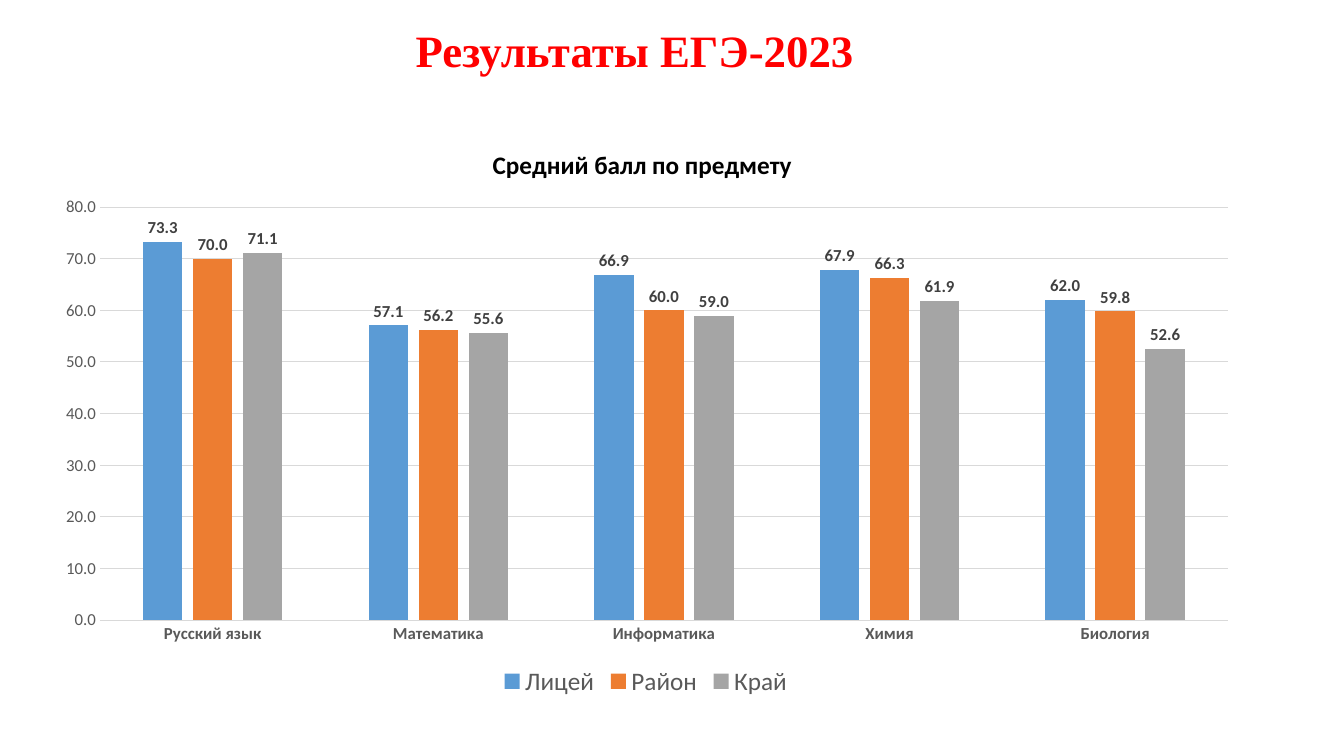
from dataclasses import dataclass

import lxml.etree
import pptx
import pptx.chart.data
import pptx.dml.color
import pptx.enum.chart
import pptx.enum.text
import pptx.oxml
import pptx.oxml.ns
import pptx.util
from pptx.util import Inches


@dataclass(frozen=True)
class Theme:
    heading_font: str = "Times New Roman"
    body_font: str = "Calibri"
    heading: str = "FF0000"
    black: str = "000000"
    label: str = "404040"
    muted: str = "595959"
    grid: str = "D9D9D9"
    heading_size: int = 32
    large_size: int = 18
    label_size: int = 12
    base_size: int = 10
    line_width: float = 0.75


@dataclass(frozen=True)
class ScoreSeries:
    name: str
    color: str
    scores: tuple[float, ...]


@dataclass(frozen=True)
class Layout:
    """Place inside the chart, as fractions of its size."""
    x: float
    y: float
    w: float | None = None
    h: float | None = None


THEME = Theme()
SUBJECTS = ("Русский язык", "Математика", "Информатика", "Химия", "Биология")
SERIES = (
    ScoreSeries("Лицей", "5B9BD5", (73.3, 57.1, 66.9, 67.9, 62)),
    ScoreSeries("Район", "ED7D31", (70, 56.2, 60, 66.3, 59.8)),
    ScoreSeries("Край", "A5A5A5", (71.1, 55.6, 59, 61.9, 52.6)),
)
TITLE_LAYOUT = Layout(0.37, 0.04)
PLOT_LAYOUT = Layout(0.05, 0.15, 0.93, 0.71)
NUMBER_FORMAT = "0.0"


def rgb(color: str) -> pptx.dml.color.RGBColor:
    return pptx.dml.color.RGBColor.from_string(color)


def style_font(font, size: int, color: str, bold: bool = False,
               name: str = THEME.body_font) -> None:
    font.name = name
    font.size = pptx.util.Pt(size)
    font.bold = bold
    font.color.rgb = rgb(color)


def style_line(line) -> None:
    line.color.rgb = rgb(THEME.grid)
    line.width = pptx.util.Pt(THEME.line_width)


def set_layout(element, layout: Layout, index: int) -> None:
    """Give a chart part a manual layout, as its child number index."""
    qn = pptx.oxml.ns.qn
    for old in element.findall(qn("c:layout")):
        element.remove(old)
    node = pptx.oxml.parse_xml(f"<c:layout {pptx.oxml.ns.nsdecls('c')}/>")
    manual = lxml.etree.SubElement(node, qn("c:manualLayout"))
    settings = {"xMode": "edge", "yMode": "edge", "x": layout.x, "y": layout.y}
    if layout.w is not None:
        settings = {"layoutTarget": "inner"} | settings | {"w": layout.w, "h": layout.h}
    for tag, value in settings.items():
        lxml.etree.SubElement(manual, qn(f"c:{tag}")).set("val", str(value))
    element.insert(index, node)


def add_heading(s) -> None:
    sp = s.shapes.title
    sp.left, sp.top, sp.width, sp.height = map(Inches, (0.85, 0.15, 10.89, 0.76))
    tf = sp.text_frame
    tf.vertical_anchor = pptx.enum.text.MSO_ANCHOR.MIDDLE
    p = tf.paragraphs[0]
    p.alignment = pptx.enum.text.PP_ALIGN.CENTER
    p.line_spacing = 0.9
    r = p.add_run()
    r.text = "Результаты ЕГЭ-2023"
    style_font(r.font, THEME.heading_size, THEME.heading, True, THEME.heading_font)


def style_axes(chart) -> None:
    category, value = chart.category_axis, chart.value_axis
    for axis in (category, value):
        axis.major_tick_mark = pptx.enum.chart.XL_TICK_MARK.NONE
        axis.minor_tick_mark = pptx.enum.chart.XL_TICK_MARK.NONE
        style_font(axis.tick_labels.font, THEME.label_size, THEME.muted, axis is category)
    style_line(category.format.line)
    value.format.line.fill.background()
    value.minimum_scale, value.maximum_scale, value.major_unit = 0, 80, 10
    value.tick_labels.number_format = NUMBER_FORMAT
    value.tick_labels.number_format_is_linked = False
    value.has_major_gridlines = True
    style_line(value.major_gridlines.format.line)


def style_series(plot) -> None:
    for series, score in zip(plot.series, SERIES):
        series.format.fill.solid()
        series.format.fill.fore_color.rgb = rgb(score.color)
        series.invert_if_negative = False
        labels = series.data_labels
        labels.show_value = True
        labels.number_format = NUMBER_FORMAT
        labels.number_format_is_linked = False
        labels.position = pptx.enum.chart.XL_LABEL_POSITION.OUTSIDE_END
        style_font(labels.font, THEME.label_size, THEME.label, True)


def add_score_chart(s) -> None:
    data = pptx.chart.data.CategoryChartData(number_format=NUMBER_FORMAT)
    data.categories = SUBJECTS
    for score in SERIES:
        data.add_series(score.name, score.scores)
    chart = s.shapes.add_chart(
        pptx.enum.chart.XL_CHART_TYPE.COLUMN_CLUSTERED,
        Inches(0.39), Inches(1.19), Inches(12.03), Inches(5.77), data).chart
    style_font(chart.font, THEME.base_size, THEME.black)

    chart.has_title = True
    title = chart.chart_title
    r = title.text_frame.paragraphs[0].add_run()
    r.text = "Средний балл по предмету"
    style_font(r.font, THEME.large_size, THEME.black, True)
    title.include_in_layout = False
    chart_element = chart.element.chart
    set_layout(chart_element.find(pptx.oxml.ns.qn("c:title")), TITLE_LAYOUT, 1)
    set_layout(chart_element.plotArea, PLOT_LAYOUT, 0)

    chart.has_legend = True
    chart.legend.position = pptx.enum.chart.XL_LEGEND_POSITION.BOTTOM
    chart.legend.include_in_layout = False
    style_font(chart.legend.font, THEME.large_size, THEME.muted)

    plot = chart.plots[0]
    plot.gap_width, plot.overlap = 219, -27
    plot.vary_by_categories = False
    style_series(plot)
    style_axes(chart)


def main() -> None:
    prs = pptx.Presentation()
    prs.slide_width, prs.slide_height = Inches(13.33), Inches(7.5)
    s = prs.slides.add_slide(prs.slide_layouts.get_by_name("Title Only"))
    add_heading(s)
    add_score_chart(s)
    prs.save("out.pptx")


if __name__ == "__main__":
    main()
